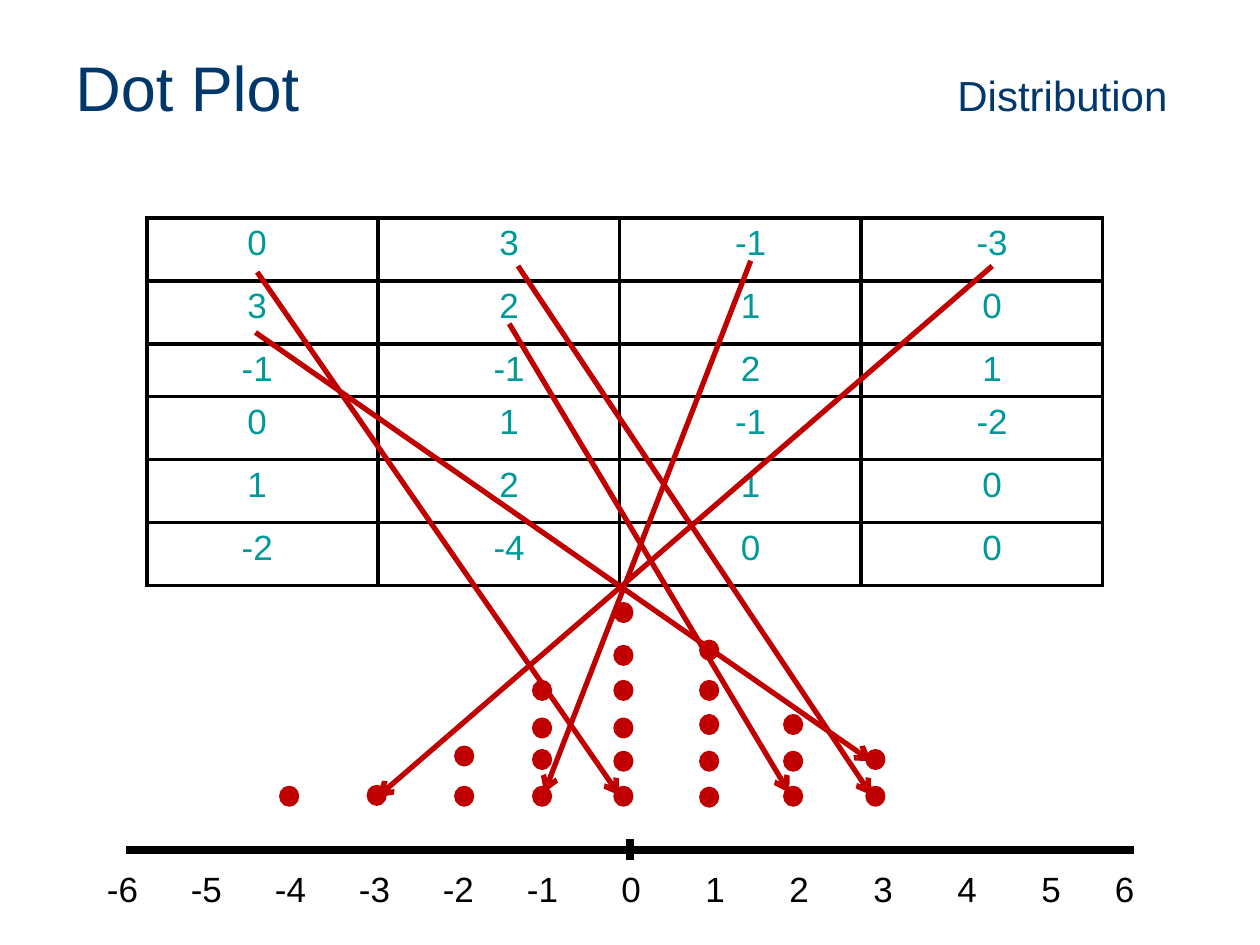
import pptx
import pptx.util
import pptx.dml.color
import pptx.enum.shapes
import pptx.enum.text
import pptx.oxml
import pptx.oxml.ns

Pt = pptx.util.Pt
COLORS = {"ink": "000000", "teal": "009999", "red": "C00000", "navy": "00386B"}


class Plot:
    font = "Arial"

    def __init__(self, slide):
        self.slide = slide

    def color(self, name):
        return pptx.dml.color.RGBColor.from_string(COLORS[name])

    def style(self, run, size, color):
        run.font.name = self.font
        run.font.size = Pt(size)
        run.font.color.rgb = self.color(color)

    def node(self, parent, tag, **attrs):
        """Append a DrawingML element to parent and return it."""
        child = pptx.oxml.parse_xml(f"<a:{tag} {pptx.oxml.ns.nsdecls('a')}/>")
        for key, value in attrs.items():
            child.set(key, str(value))
        parent.append(child)
        return child

    def text(self, parts, left, top, width, height, color="ink"):
        """Add one line of text; parts holds (words, size) pairs."""
        box = self.slide.shapes.add_textbox(Pt(left), Pt(top), Pt(width), Pt(height))
        box.text_frame.word_wrap = True
        line = box.text_frame.paragraphs[0]
        for words, size in parts:
            run = line.add_run()
            run.text = words
            self.style(run, size, color)
        return box

    def title(self, main, side, tab):
        box = self.text([(main + "\t", 36), (side, 24)], 36, 21.5, 648, 56, "navy")
        box.text_frame.vertical_anchor = pptx.enum.text.MSO_ANCHOR.MIDDLE
        props = box.text_frame.paragraphs[0]._p.get_or_add_pPr()
        stops = self.node(props, "tabLst")
        self.node(stops, "tab", pos=Pt(tab), algn="l")

    def line(self, start, end, color, weight, arrow=False):
        link = self.slide.shapes.add_connector(
            pptx.enum.shapes.MSO_CONNECTOR.STRAIGHT, *map(Pt, start + end))
        link.line.color.rgb = self.color(color)
        link.line.width = Pt(weight)
        if arrow:
            self.node(link.line._get_or_add_ln(), "tailEnd", type="arrow")
        self.node(link._element.spPr, "effectLst")

    def dot(self, left, top):
        dot = self.slide.shapes.add_shape(
            pptx.enum.shapes.MSO_SHAPE.OVAL, Pt(left), Pt(top), Pt(9.5), Pt(10))
        dot.shadow.inherit = False
        dot.fill.solid()
        dot.fill.fore_color.rgb = self.color("red")
        dot.line.color.rgb = self.color("red")
        dot.line.width = Pt(2)

    def border(self, cell):
        props = cell._tc.get_or_add_tcPr()
        for side in ("lnL", "lnR", "lnT", "lnB"):
            edge = self.node(props, side, w=Pt(2.25))
            fill = self.node(edge, "solidFill")
            self.node(fill, "srgbClr", val=COLORS["ink"])

    def table(self, rows, left, top, widths, heights, shifts):
        """Add a grid; shifts move each column's text off centre."""
        frame = self.slide.shapes.add_table(
            len(rows), len(widths), Pt(left), Pt(top), Pt(sum(widths)), Pt(sum(heights)))
        grid = frame.table
        grid.first_row = grid.horz_banding = False
        for col, width in zip(grid.columns, widths):
            col.width = Pt(width)
        for row, height, values in zip(grid.rows, heights, rows):
            row.height = Pt(height)
            for cell, value, shift in zip(row.cells, values, shifts):
                cell.margin_left = Pt(max(2 * shift, 0))
                cell.margin_right = Pt(max(-2 * shift, 0))
                cell.margin_top, cell.margin_bottom = Pt(3.6), Pt(0)
                cell.text_frame.text = str(value)
                para = cell.text_frame.paragraphs[0]
                para.alignment = pptx.enum.text.PP_ALIGN.CENTER
                self.style(para.runs[0], 20, "teal")
                self.border(cell)
                cell.fill.background()


DATA = [
    (0, 3, -1, -3),
    (3, 2, 1, 0),
    (-1, -1, 2, 1),
    (0, 1, -1, -2),
    (1, 2, 1, 0),
    (-2, -4, 0, 0),
]
ARROWS = [
    ((147, 155.5), (354, 454.5)),
    ((296, 152), (498, 454.5)),
    ((429, 149), (311, 453)),
    ((567, 152), (215.5, 455.5)),
    ((146, 190), (498, 435)),
    ((291, 185), (451, 453)),
]
# Each stack of dots: value, left edge, tops from the axis upwards
STACKS = [
    (-4, 160.5, [450]),
    (-3, 210.5, [449.5]),
    (-2, 260.5, [450, 427]),
    (-1, 305, [450, 429, 411, 389.5]),
    (0, 351.5, [450, 430, 411, 389.5, 369.5, 345]),
    (1, 400.5, [450.5, 430, 409, 389.5, 366.5]),
    (2, 448.5, [450, 430, 409]),
    (3, 495.5, [450, 429]),
]


def main():
    deck = pptx.Presentation()
    deck.slide_width, deck.slide_height = Pt(720), Pt(540)
    plot = Plot(deck.slides.add_slide(deck.slide_layouts[6]))
    plot.title("Dot Plot", "Distribution", 504)
    plot.line((72, 485.5), (648, 485.5), "ink", 4.5)
    plot.line((360, 479.5), (360, 491.5), "ink", 4.5)
    for value in range(-6, 7):
        left, width = (342, 36) if value < 0 else (348, 24)
        left = min(left + 48 * value, 630)
        plot.text([(str(value), 20)], left, 492, width, 31)
    plot.table(DATA, 84, 124.5, [132, 138, 138, 138],
               [36, 36, 30, 36, 36, 36], [-3, 6, 6, 6])
    for start, end in ARROWS:
        plot.line(start, end, "red", 3, arrow=True)
    for _, left, tops in STACKS:
        for top in tops:
            plot.dot(left, top)
    deck.save("out.pptx")


if __name__ == "__main__":
    main()
